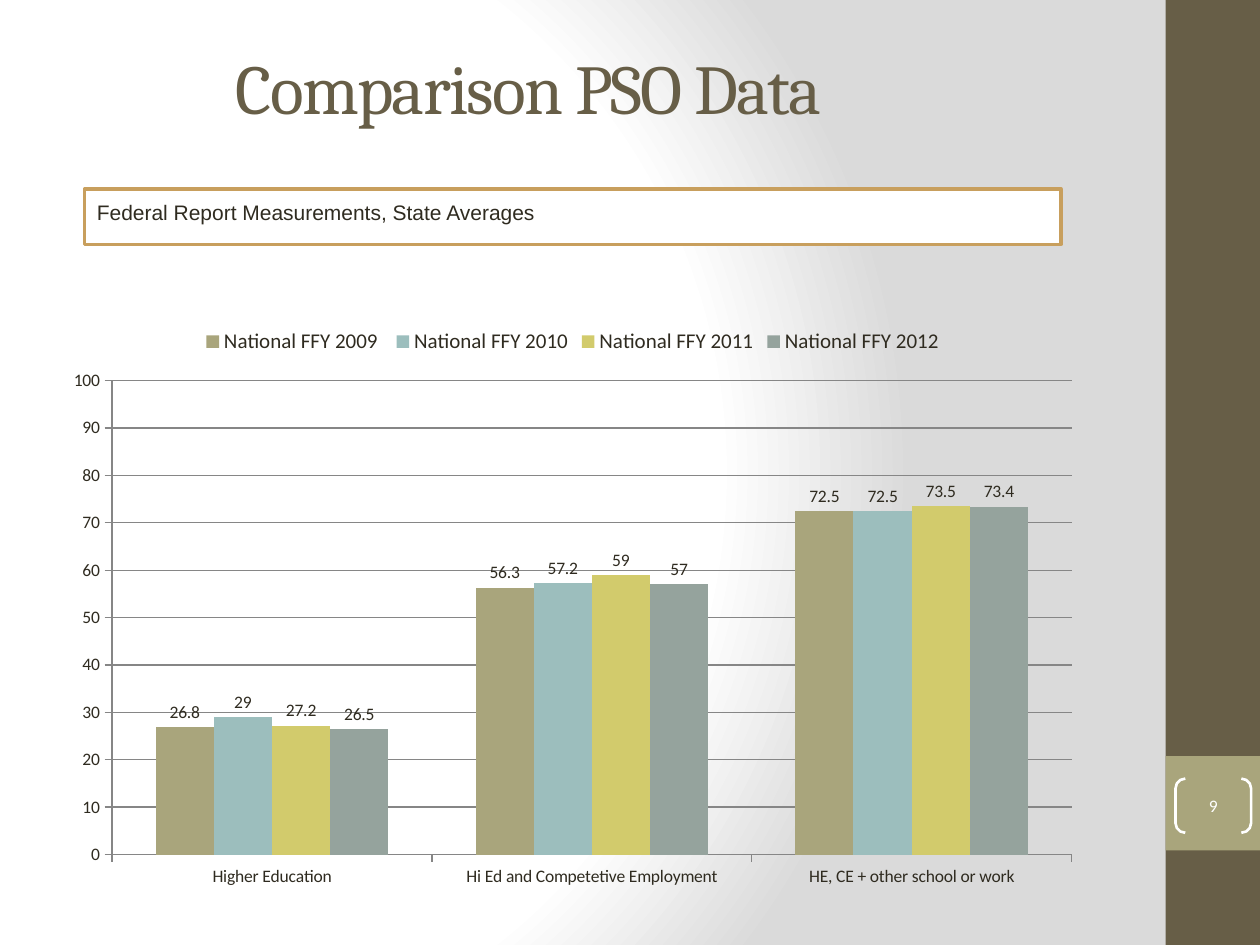
from lxml.etree import SubElement
from pptx import Presentation
from pptx.chart.data import CategoryChartData
from pptx.dml.color import RGBColor
from pptx.enum.chart import XL_CHART_TYPE, XL_LABEL_POSITION, XL_LEGEND_POSITION, XL_TICK_MARK
from pptx.enum.shapes import MSO_SHAPE
from pptx.enum.text import MSO_ANCHOR, PP_ALIGN
from pptx.oxml import parse_xml
from pptx.oxml.ns import nsdecls, qn
from pptx.util import Inches, Pt

WHITE = RGBColor(0xFF, 0xFF, 0xFF)
GREY = RGBColor(0xDA, 0xDA, 0xDA)
BROWN = RGBColor(0x67, 0x5E, 0x47)
OLIVE = RGBColor(0xA9, 0xA5, 0x7C)
GOLD = RGBColor(0xC8, 0x9F, 0x5D)
INK = RGBColor(0x2F, 0x2B, 0x20)
TEAL = RGBColor(0x9C, 0xBE, 0xBD)
LIME = RGBColor(0xD2, 0xCB, 0x6C)
SAGE = RGBColor(0x95, 0xA3, 0x9D)
RULE = RGBColor(0x86, 0x86, 0x86)

GROUPS = ["Higher Education", "Hi Ed and Competetive Employment", "HE, CE + other school or work"]
SERIES = [
    ("National FFY 2009 ", (26.8, 56.3, 72.5), OLIVE),
    ("National FFY 2010", (29, 57.2, 72.5), TEAL),
    ("National FFY 2011", (27.2, 59, 73.5), LIME),
    ("National FFY 2012", (26.5, 57, 73.4), SAGE),
]


class Deck:
    head = "Cambria"
    body = "Calibri"
    plain = "Arial"

    def __init__(self, show):
        self.slide = show.slides.add_slide(show.slide_layouts[5])

    def font(self, font, name, size, color):
        font.name, font.size, font.color.rgb = name, Pt(size), color

    def backdrop(self, stops, focus):
        self.slide.background.fill.gradient()
        old = self.slide.element.find(".//" + qn("a:gradFill"))
        new = parse_xml(f'<a:gradFill rotWithShape="1" {nsdecls("a")}/>')
        marks = SubElement(new, qn("a:gsLst"))
        for spot, color in stops:
            mark = SubElement(marks, qn("a:gs"), pos=str(spot * 1000))
            SubElement(mark, qn("a:srgbClr"), val=str(color))
        ring = SubElement(new, qn("a:path"), path="circle")
        edges = {side: str(part * 1000) for side, part in zip("ltrb", focus)}
        SubElement(ring, qn("a:fillToRect"), **edges)
        old.getparent().replace(old, new)

    def title(self, text, box):
        shape = self.slide.shapes.title
        shape.left, shape.top, shape.width, shape.height = map(Inches, box)
        frame = shape.text_frame
        frame.text = text
        frame.vertical_anchor = MSO_ANCHOR.MIDDLE
        para = frame.paragraphs[0]
        para.alignment = PP_ALIGN.CENTER
        self.font(para.font, self.head, 40, BROWN)
        para.runs[0].font._element.set("spc", "-100")

    def shape(self, kind, box, fill=None, line=None, width=0):
        shape = self.slide.shapes.add_shape(kind, *map(Inches, box))
        shape.shadow.inherit = False
        if fill is None:
            shape.fill.background()
        else:
            shape.fill.solid()
            shape.fill.fore_color.rgb = fill
        if line is None:
            shape.line.fill.background()
        else:
            shape.line.color.rgb = line
            shape.line.width = Pt(width)
        return shape

    def label(self, shape, text, name, size, color, align, anchor, inset):
        frame = shape.text_frame
        frame.text = text
        frame.word_wrap = True
        frame.vertical_anchor = anchor
        frame.margin_left = frame.margin_right = Inches(inset)
        frame.margin_top = frame.margin_bottom = Inches(inset * 0.8)
        para = frame.paragraphs[0]
        para.alignment = align
        self.font(para.font, name, size, color)

    def axis(self, axis):
        axis.major_tick_mark = XL_TICK_MARK.OUTSIDE
        axis.minor_tick_mark = XL_TICK_MARK.NONE
        axis.format.line.color.rgb = RULE
        self.font(axis.tick_labels.font, self.body, 10, INK)

    def chart(self, box, groups, series):
        data = CategoryChartData()
        data.categories = groups
        for name, values, _ in series:
            data.add_series(name, values)
        kind = XL_CHART_TYPE.COLUMN_CLUSTERED
        chart = self.slide.shapes.add_chart(kind, *map(Inches, box), data).chart
        self.font(chart.font, self.body, 10, INK)
        chart.has_title = False
        chart.has_legend = True
        chart.legend.position = XL_LEGEND_POSITION.TOP
        chart.legend.include_in_layout = False
        self.font(chart.legend.font, self.body, 12, INK)
        self.axis(chart.category_axis)
        scale = chart.value_axis
        self.axis(scale)
        scale.minimum_scale, scale.maximum_scale, scale.major_unit = 0, 100, 10
        scale.has_major_gridlines = True
        scale.major_gridlines.format.line.color.rgb = RULE
        plot = chart.plots[0]
        plot.gap_width = 150
        plot.overlap = 0
        plot.vary_by_categories = False
        for bars, (_, _, color) in zip(plot.series, series):
            bars.format.fill.solid()
            bars.format.fill.fore_color.rgb = color
            tags = bars.data_labels
            tags.show_value = True
            tags.position = XL_LABEL_POSITION.OUTSIDE_END
            self.font(tags.font, self.body, 10, INK)


def main():
    show = Presentation()
    show.slide_width, show.slide_height = Inches(10), Inches(7.5)
    deck = Deck(show)
    deck.backdrop([(0, WHITE), (75, WHITE), (100, GREY)], (20, 50, 100, 50))
    deck.shape(MSO_SHAPE.RECTANGLE, (9.25, 0, 0.75, 7.5), BROWN)
    deck.shape(MSO_SHAPE.RECTANGLE, (9.25, 6, 0.75, 0.75), OLIVE)
    page = deck.shape(MSO_SHAPE.DOUBLE_BRACKET, (9.33, 6.18, 0.6, 0.43), line=WHITE, width=1.5)
    page.adjustments[0] = 0.18
    deck.label(page, "9", deck.body, 10, WHITE, PP_ALIGN.CENTER, MSO_ANCHOR.MIDDLE, 0)
    deck.title("Comparison PSO Data ", (0, 0.25, 8.5, 0.87))
    note = deck.shape(MSO_SHAPE.RECTANGLE, (0.67, 1.5, 7.75, 0.44), WHITE, GOLD, 2)
    deck.label(note, "Federal Report Measurements, State Averages", deck.plain, 12, INK,
               PP_ALIGN.LEFT, MSO_ANCHOR.TOP, 0.1)
    deck.chart((0.42, 2.5, 8.25, 4.63), GROUPS, SERIES)
    show.save("out.pptx")


if __name__ == "__main__":
    main()
